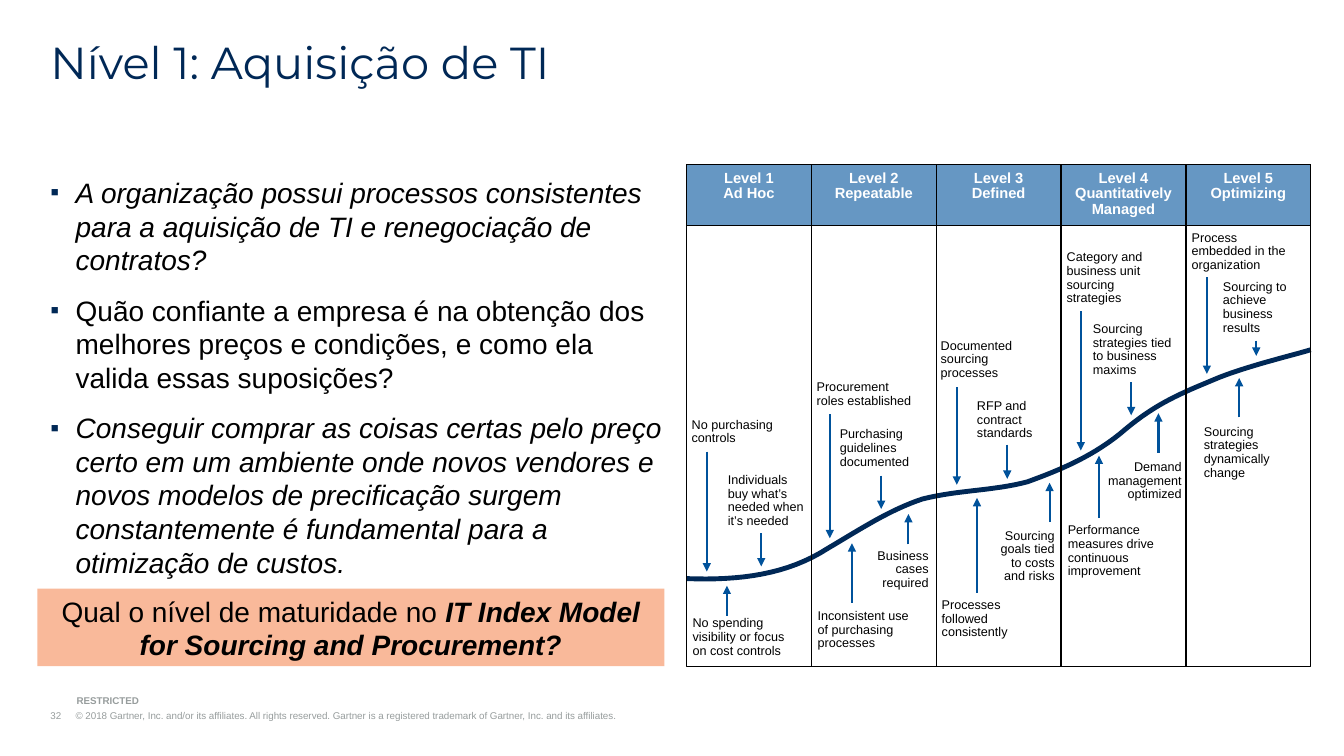
from lxml.etree import SubElement
from pptx import Presentation
from pptx.dml.color import RGBColor
from pptx.enum.shapes import MSO_CONNECTOR as Connector, MSO_SHAPE as Shape
from pptx.enum.text import MSO_ANCHOR as Anchor, MSO_AUTO_SIZE as AutoSize, PP_ALIGN as Align
from pptx.oxml.ns import qn
from pptx.util import Inches, Pt

NAVY = RGBColor(0x00, 0x28, 0x56)
ARROW_BLUE = RGBColor(0x00, 0x52, 0x9B)
HEADER_BLUE = RGBColor(0x66, 0x97, 0xC3)
PEACH = RGBColor(0xF9, 0xB9, 0x9A)
GREY = RGBColor(0x97, 0x9D, 0x9D)
BLACK = RGBColor(0x00, 0x00, 0x00)
WHITE = RGBColor(0xFF, 0xFF, 0xFF)

QUESTIONS = [
    ("A organização possui processos consistentes para a aquisição de TI e renegociação de contratos?", True),
    ("Quão confiante a empresa é na obtenção dos melhores preços e condições, e como ela valida essas suposições?",
     False),
    ("Conseguir comprar as coisas certas pelo preço certo em um ambiente onde novos vendores e novos modelos de "
     "precificação surgem constantemente é fundamental para a otimização de custos.", True),
]
LEVELS = ["Ad Hoc", "Repeatable", "Defined", "Quantitatively Managed", "Optimizing"]
CURVE_START = (0, 4.11)
CURVE = [
    ((0.53, 4.13), (1, 4.07), (1.4, 3.81)),
    ((1.74, 3.61), (2.01, 3.43), (2.34, 3.32)),
    ((2.7, 3.23), (3.04, 3.24), (3.38, 3.15)),
    ((3.71, 3.03), (4.05, 2.89), (4.35, 2.63)),
    ((4.66, 2.37), (4.91, 2.27), (5.22, 2.14)),
    ((5.52, 2.01), (6.03, 1.89), (6.19, 1.84)),
]
PRACTICES = [
    ("No purchasing\ncontrols", Align.LEFT, (0, 2.48, 1.21, 0.36), (0.2, 2.85, 4.04)),
    ("Individuals buy what’s needed when it’s needed", Align.LEFT, (0.36, 3.01, 0.86, 0.65), (0.74, 3.66, 3.99)),
    ("No spending visibility or focus on cost controls", Align.LEFT, (0.01, 4.44, 1.06, 0.49), (0.4, 4.48, 4.18)),
    ("Procurement roles established", Align.LEFT, (1.24, 2.1, 1.04, 0.37), (1.42, 2.48, 3.71)),
    ("Purchasing guidelines documented", Align.LEFT, (1.47, 2.58, 0.96, 0.49), (1.93, 3.09, 3.42)),
    ("Inconsistent use of purchasing processes", Align.LEFT, (1.25, 4.37, 1.13, 0.49), (1.64, 4.35, 3.76)),
    ("Business cases required", Align.RIGHT, (1.68, 3.77, 0.77, 0.49), (2.2, 3.77, 3.47)),
    ("Documented sourcing processes", Align.LEFT, (2.47, 1.7, 0.95, 0.49), (2.68, 2.21, 3.18)),
    ("RFP and contract standards", Align.LEFT, (2.83, 2.3, 0.7, 0.49), (3.18, 2.78, 3.12)),
    ("Processes followed consistently", Align.LEFT, (2.48, 4.26, 1.15, 0.49), (2.88, 4.25, 3.31)),
    ("Sourcing goals tied to costs and risks", Align.RIGHT, (3.02, 3.57, 0.68, 0.62), (3.6, 3.55, 3.16)),
    ("Category and business unit sourcing strategies", Align.LEFT, (3.72, 0.83, 0.93, 0.62), (3.91, 1.46, 2.84)),
    ("Sourcing strategies tied to business maxims", Align.LEFT, (3.98, 1.54, 0.93, 0.62), (4.41, 2.16, 2.49)),
    ("Performance measures drive continuous improvement", Align.LEFT, (3.73, 3.52, 1.01, 0.65), (4.09, 3.51, 2.89)),
    ("Demand management optimized", Align.RIGHT, (3.98, 2.89, 0.98, 0.51), (4.68, 2.86, 2.47)),
    ("Process embedded in the organization", Align.LEFT, (4.96, 0.63, 1.06, 0.49), (5.16, 1.12, 2.08)),
    ("Sourcing to achieve business results", Align.LEFT, (5.27, 1.12, 0.77, 0.62), (5.65, 1.75, 1.9)),
    ("Sourcing strategies dynamically change", Align.LEFT, (5.08, 2.54, 0.81, 0.62), (5.48, 2.51, 2.12)),
]


def place(part, box):
    """Move a shape to a box given in inches."""
    part.left, part.top, part.width, part.height = map(Inches, box)


def set_frame(frame, anchor, inset=0):
    """Set anchor, wrapping and equal insets of a text frame."""
    frame.word_wrap = True
    frame.auto_size = AutoSize.NONE
    frame.vertical_anchor = anchor
    frame.margin_left = frame.margin_right = frame.margin_top = frame.margin_bottom = Inches(inset)


def write(paragraph, text, size, color, bold=False, italic=False, face="Arial"):
    """Add text as formatted runs, with a line break at each newline."""
    for number, line in enumerate(text.split("\n")):
        if number:
            paragraph.add_line_break()
        run = paragraph.add_run()
        run.text = line
        font = run.font
        font.name, font.size, font.bold, font.italic = face, Pt(size), bold, italic
        font.color.rgb = color


def set_indent(paragraph, inches):
    """Give a paragraph a hanging indent."""
    properties = paragraph._p.get_or_add_pPr()
    properties.set("marL", str(Inches(inches)))
    properties.set("indent", str(-Inches(inches)))
    return properties


def add_rectangle(slide, box, fill=None, line=None):
    """Add a flat rectangle with optional fill and line."""
    rectangle = slide.shapes.add_shape(Shape.RECTANGLE, *map(Inches, box))
    rectangle.shadow.inherit = False
    if fill is None:
        rectangle.fill.background()
    else:
        rectangle.fill.solid()
        rectangle.fill.fore_color.rgb = fill
    if line is None:
        rectangle.line.fill.background()
    else:
        rectangle.line.color.rgb = line
        rectangle.line.width = Pt(1)
    return rectangle


def add_vertical(slide, x, start, end, color, width, arrow=False):
    """Add a vertical line, with an arrowhead at its end if wanted."""
    vertical = slide.shapes.add_connector(Connector.STRAIGHT, *map(Inches, (x, start, x, end)))
    vertical.line.color.rgb = color
    vertical.line.width = Pt(width)
    if arrow:
        SubElement(vertical.line._get_or_add_ln(), qn("a:tailEnd"), type="triangle")
    SubElement(vertical._element.spPr, qn("a:effectLst"))


def fill_title(slide, box):
    """Place and write the slide title."""
    title = slide.shapes.title
    place(title, box)
    set_frame(title.text_frame, Anchor.TOP)
    heading = title.text_frame.paragraphs[0]
    heading.alignment, heading.line_spacing = Align.LEFT, 0.9
    write(heading, "Nível 1: Aquisição de TI", 32, NAVY, face="Montserrat")


def fill_questions(slide, box):
    """Place the body and write its bulleted questions."""
    body = slide.placeholders[1]
    place(body, box)
    frame = body.text_frame
    set_frame(frame, Anchor.TOP)
    for number, (question, italic) in enumerate(QUESTIONS):
        paragraph = frame.add_paragraph() if number else frame.paragraphs[0]
        properties = set_indent(paragraph, 0.25)
        SubElement(SubElement(properties, qn("a:buClr")), qn("a:srgbClr"), val=str(NAVY))
        SubElement(properties, qn("a:buSzPct"), val="90000")
        SubElement(properties, qn("a:buFont"), typeface="Arial")
        SubElement(properties, qn("a:buChar"), char="▪")
        paragraph.space_before, paragraph.space_after = Pt(0), Pt(12)
        write(paragraph, question, 20, BLACK, italic=italic)


def add_callout(slide, box):
    """Add the highlighted maturity question."""
    frame = add_rectangle(slide, box, PEACH).text_frame
    set_frame(frame, Anchor.BOTTOM, 0.05)
    frame.margin_left = frame.margin_right = Inches(0.1)
    question = frame.paragraphs[0]
    question.alignment = Align.CENTER
    write(question, "Qual o nível de maturidade no ", 20, BLACK)
    write(question, "IT Index Model for Sourcing and Procurement?", 20, BLACK, bold=True, italic=True)


def add_curve(slide, left, top, steps=16):
    """Draw the maturity curve from its cubic segments."""
    points, start = [], CURVE_START
    for segment in CURVE:
        for step in range(1, steps + 1):
            t = step / steps
            weights = ((1 - t) ** 3, 3 * t * (1 - t) ** 2, 3 * t ** 2 * (1 - t), t ** 3)
            x, y = (sum(w * p[axis] for w, p in zip(weights, (start, *segment))) for axis in (0, 1))
            points.append((Inches(left + x), Inches(top + y)))
        start = segment[-1]
    builder = slide.shapes.build_freeform(Inches(left + CURVE_START[0]), Inches(top + CURVE_START[1]))
    builder.add_line_segments(points, close=False)
    curve = builder.convert_to_shape()
    curve.shadow.inherit = False
    curve.fill.background()
    curve.line.color.rgb = NAVY
    curve.line.width = Pt(3.5)


def add_maturity_model(slide, box):
    """Add the five-level model with its curve, practices and headers."""
    left, top, width, height = box
    add_curve(slide, left, top)
    for text, alignment, (x, y, w, h), (arrow_x, start, end) in PRACTICES:
        label = slide.shapes.add_textbox(*map(Inches, (left + x, top + y, w, h)))
        set_frame(label.text_frame, Anchor.BOTTOM if end > start else Anchor.TOP, 0.05)
        practice = label.text_frame.paragraphs[0]
        practice.alignment, practice.line_spacing = alignment, 0.9
        write(practice, text, 9, BLACK)
        add_vertical(slide, left + arrow_x, top + start, top + end, ARROW_BLUE, 1.5, arrow=True)
    column = width / len(LEVELS)
    for number, level in enumerate(LEVELS):
        x = left + number * column
        header = add_rectangle(slide, (x, top, column, 0.61), HEADER_BLUE, BLACK)
        set_frame(header.text_frame, Anchor.TOP, 0.06)
        heading = header.text_frame.paragraphs[0]
        heading.alignment, heading.line_spacing = Align.CENTER, 0.9
        write(heading, f"Level {number + 1}\n{level}", 10.5, WHITE, bold=True)
        if number:
            add_vertical(slide, x, top, top + height, BLACK, 1)
    add_rectangle(slide, box, line=BLACK)


def add_footer(slide, box, text, bold=False):
    """Add one small grey footer line with a tab stop."""
    footer = slide.shapes.add_textbox(*map(Inches, box))
    set_frame(footer.text_frame, Anchor.BOTTOM)
    notice = footer.text_frame.paragraphs[0]
    tabs = SubElement(set_indent(notice, 0.25), qn("a:tabLst"))
    SubElement(tabs, qn("a:tab"), pos=str(Inches(0.25)), algn="l")
    write(notice, text, 7, GREY, bold=bold)


def main():
    """Build and save the slide."""
    deck = Presentation()
    deck.slide_width, deck.slide_height = Inches(13.33), Inches(7.5)
    slide = deck.slides.add_slide(deck.slide_layouts[1])
    add_footer(slide, (0.5, 7.04, 7.99, 0.12), "32\t© 2018 Gartner, Inc. and/or its affiliates. All rights reserved. "
               "Gartner is a registered trademark of Gartner, Inc. and its affiliates.")
    add_footer(slide, (0.76, 6.89, 2.53, 0.12), "RESTRICTED", bold=True)
    fill_title(slide, (0.5, 0.4, 12.33, 0.48))
    fill_questions(slide, (0.5, 1.74, 6.16, 4.88))
    add_callout(slide, (0.37, 5.84, 6.22, 0.77))
    add_maturity_model(slide, (6.81, 1.63, 6.19, 4.98))
    deck.save("out.pptx")


if __name__ == "__main__":
    main()
